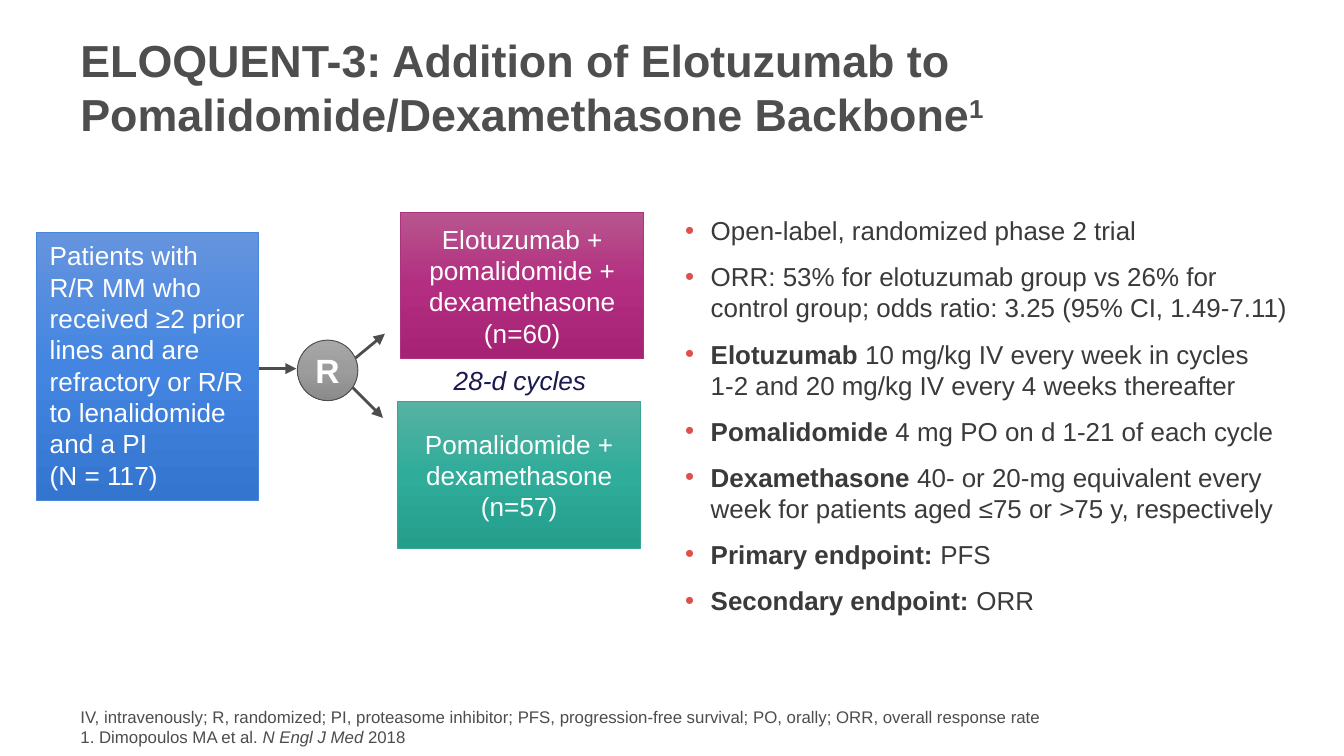
import copy

import pptx
import pptx.dml.color
import pptx.enum.dml
import pptx.enum.shapes
import pptx.enum.text
import pptx.oxml
import pptx.oxml.ns
import pptx.util

Pt = pptx.util.Pt
RGB = pptx.dml.color.RGBColor
qn = pptx.oxml.ns.qn
SHAPE = pptx.enum.shapes.MSO_SHAPE
ALIGN = pptx.enum.text.PP_ALIGN
ANCHOR = pptx.enum.text.MSO_ANCHOR
GROW = pptx.enum.text.MSO_AUTO_SIZE.SHAPE_TO_FIT_TEXT
NS = pptx.oxml.ns.nsdecls("a")

WHITE = RGB(0xFF, 0xFF, 0xFF)
TITLE_GRAY = RGB(0x4D, 0x4E, 0x4D)
GRAY = RGB(0x4D, 0x4D, 0x4D)
BODY_GRAY = RGB(0x3A, 0x3A, 0x3A)
NAVY = RGB(0x19, 0x19, 0x4D)
BULLET_RED = RGB(0xDF, 0x50, 0x4B)
BLUES = [RGB(0x65, 0x94, 0xDE), RGB(0x43, 0x85, 0xE0), RGB(0x33, 0x75, 0xCF)]
GRAYS = [RGB(0xA8, 0xA8, 0xA8), RGB(0x9C, 0x9C, 0x9C), RGB(0x8B, 0x8B, 0x8B)]
MAGENTAS = [RGB(0xB8, 0x56, 0x8E), RGB(0xB3, 0x2D, 0x80), RGB(0xA5, 0x22, 0x74)]
TEALS = [RGB(0x57, 0xB2, 0xA3), RGB(0x2F, 0xAC, 0x9A), RGB(0x25, 0x9E, 0x8C)]
BLUE_LINE = RGB(0x4A, 0x86, 0xD9)
MAGENTA_LINE = RGB(0xAD, 0x33, 0x7F)
TEAL_LINE = RGB(0x35, 0xA6, 0x96)

PLAIN, BOLD, ITALIC = {}, {"bold": True}, {"italic": True}


def write(s, paragraphs, size, color, frame={}, para={}, bullet=None):
    tf = s.text_frame
    for k, v in {"word_wrap": True, "vertical_anchor": ANCHOR.TOP, **frame}.items():
        setattr(tf, k, v)
    for i, runs in enumerate(paragraphs):
        p = tf.paragraphs[0] if i == 0 else tf.add_paragraph()
        for k, v in {"alignment": ALIGN.LEFT, **para}.items():
            setattr(p, k, v)
        if bullet:
            pPr = p._p.get_or_add_pPr()
            pPr.set("marL", str(Pt(13.7)))
            pPr.set("indent", str(-Pt(13.7)))
            for xml in (f'<a:buClr {NS}><a:srgbClr val="{bullet}"/></a:buClr>',
                        f'<a:buFont {NS} typeface="Arial"/>',
                        f'<a:buChar {NS} char="•"/>'):
                pPr.append(pptx.oxml.parse_xml(xml))
        for text, style in runs:
            for j, line in enumerate(text.split("\n")):
                if j:
                    p.add_line_break()
                r = p.add_run()
                r.text = line
                for k, v in {"name": "Arial", "size": Pt(size), **style}.items():
                    setattr(r.font, k, v)
                r.font.color.rgb = color


def add_node(kind, box, colors, line):
    s = slide.shapes.add_shape(kind, *map(Pt, box))
    s.shadow.inherit = False
    s.fill.gradient()
    s.fill.gradient_angle = 270
    stops = s._element.spPr.find(".//" + qn("a:gsLst"))
    stops.insert(1, copy.deepcopy(stops[0]))
    for i, (stop, color) in enumerate(zip(s.fill.gradient_stops, colors)):
        stop.position = i / 2
        stop.color.rgb = color
    s.line.color.rgb = line
    s.line.width = Pt(0.5)
    return s


prs = pptx.Presentation()
prs.slide_width, prs.slide_height = Pt(720), Pt(405)
slide = prs.slides.add_slide(prs.slide_layouts[6])

title = slide.shapes.add_textbox(Pt(36), Pt(11.5), Pt(634), Pt(70))
write(title, [[("ELOQUENT-3: Addition of Elotuzumab to Pomalidomide/Dexamethasone Backbone", BOLD),
               ("1", BOLD)]], 24, TITLE_GRAY, {"vertical_anchor": ANCHOR.MIDDLE})
title.text_frame.paragraphs[0].runs[1].font._element.set("baseline", "30000")

body = slide.shapes.add_textbox(Pt(360), Pt(111.6), Pt(340.6), Pt(234))
points = [
    [("Open-label, randomized phase 2 trial", PLAIN)],
    [("ORR: 53% for elotuzumab group vs 26% for control group; odds ratio: 3.25 (95% CI, 1.49-7.11)", PLAIN)],
    [("Elotuzumab", BOLD), (" 10 mg/kg IV every week in cycles \n1-2 and 20 mg/kg IV every 4 weeks thereafter", PLAIN)],
    [("Pomalidomide", BOLD), (" 4 mg PO on d 1-21 of each cycle", PLAIN)],
    [("Dexamethasone", BOLD), (" 40- or 20-mg equivalent every week for patients aged ≤75 or >75 y, respectively", PLAIN)],
    [("Primary endpoint: ", BOLD), ("PFS", PLAIN)],
    [("Secondary endpoint: ", BOLD), ("ORR", PLAIN)],
]
write(body, points, 13.9, BODY_GRAY, para={"space_after": Pt(8)}, bullet=BULLET_RED)

footnote = slide.shapes.add_textbox(Pt(36), Pt(375), Pt(620.6), Pt(26))
write(footnote, [
    [("IV, intravenously; R, randomized; PI, proteasome inhibitor; PFS, progression-free survival; "
      "PO, orally; ORR, overall response rate", PLAIN)],
    [("1. Dimopoulos MA et al. ", PLAIN), ("N Engl J Med ", ITALIC), ("2018", PLAIN)],
], 9, GRAY)

for ends in [(117.4, 197.5, 158.8, 197.5), (174.2, 205.2, 206.2, 178.8), (173.5, 192.2, 205.2, 223.9)]:
    arrow = slide.shapes.add_connector(pptx.enum.shapes.MSO_CONNECTOR.STRAIGHT, *map(Pt, ends))
    arrow.line.color.rgb = GRAY
    arrow.line.width = Pt(1.5)
    arrow.line._get_or_add_ln().append(pptx.oxml.parse_xml(f'<a:tailEnd {NS} type="triangle"/>'))
    arrow._element.spPr.append(pptx.oxml.parse_xml(f"<a:effectLst {NS}/>"))

patients = add_node(SHAPE.RECTANGLE, (19.6, 124.8, 119, 143.3), BLUES, BLUE_LINE)
write(patients, [
    [("Patients with R/R MM who received ≥2 prior lines and are refractory or R/R to lenalidomide and a PI", PLAIN)],
    [("(N = 117)", PLAIN)],
], 14, WHITE, {"auto_size": GROW})

middle = {"vertical_anchor": ANCHOR.MIDDLE}
center = {"alignment": ALIGN.CENTER}

cycles = slide.shapes.add_textbox(Pt(213.8), Pt(191.5), Pt(129.6), Pt(24.5))
write(cycles, [[("28-d cycles", ITALIC)]], 14, NAVY, {**middle, "auto_size": GROW}, center)

randomized = add_node(SHAPE.OVAL, (159.3, 182.2, 32.4, 32.4), GRAYS, GRAY)
write(randomized, [[("R", BOLD)]], 18, WHITE, {**middle, "word_wrap": False}, center)

for text, left, top, colors, line in [
    ("Elotuzumab + pomalidomide + dexamethasone (n=60)", 214.6, 113.8, MAGENTAS, MAGENTA_LINE),
    ("Pomalidomide + dexamethasone (n=57)", 213, 215.3, TEALS, TEAL_LINE),
]:
    arm = add_node(SHAPE.RECTANGLE, (left, top, 130.3, 78.5), colors, line)
    write(arm, [[(text, PLAIN)]], 14, WHITE, middle, center)

prs.save("out.pptx")
